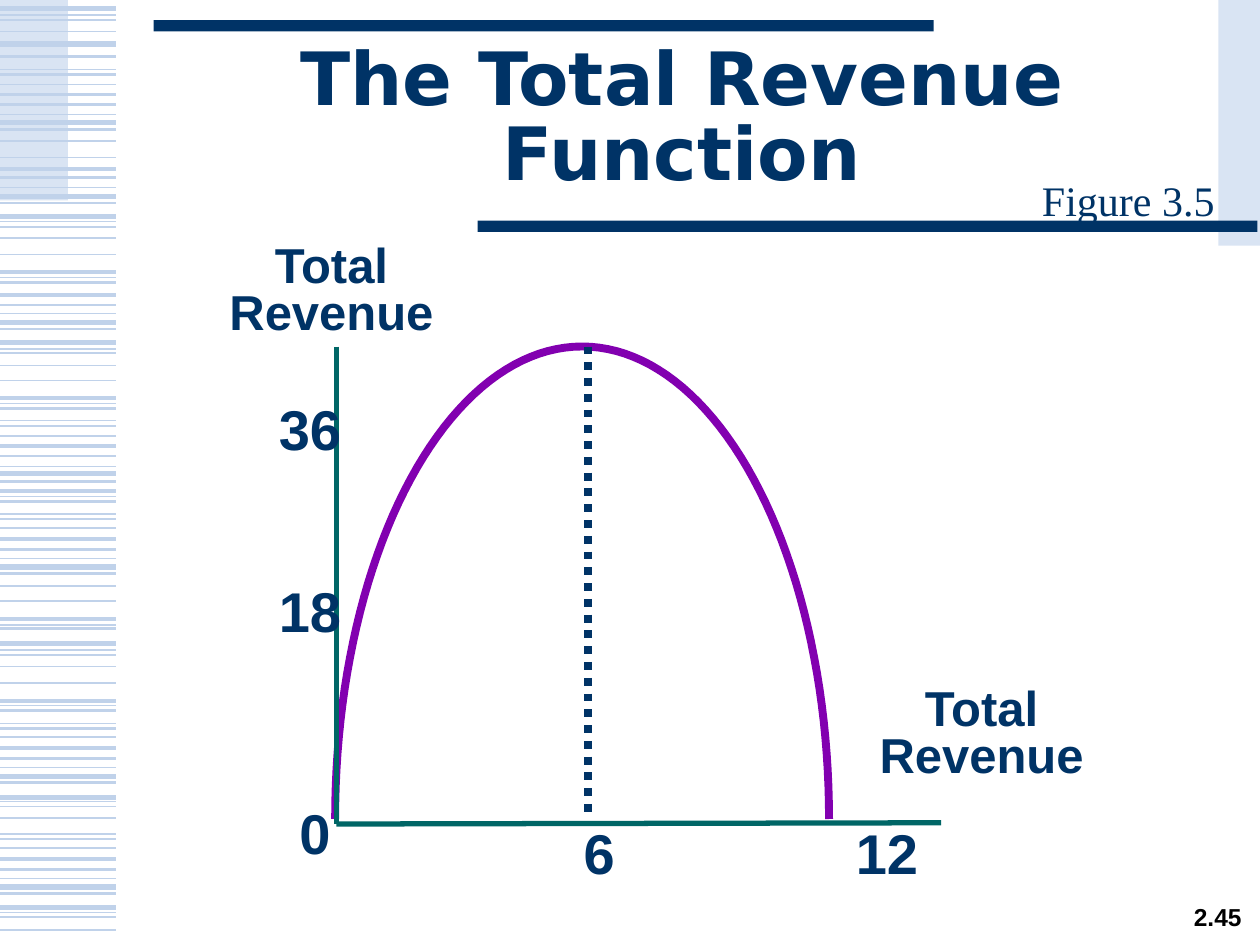
import math

import pptx
import pptx.dml.color
import pptx.enum.dml
import pptx.enum.shapes
import pptx.enum.text
import pptx.oxml
import pptx.util

COLORS = {"navy": "003366", "pale": "D9E4F3", "stripe": "C0D2EA",
          "curve": "8200B0", "axis": "006666", "black": "000000"}

# Coordinates are in inches; length() turns them into Cm.
BARS = [
    (0, 0, 0.54, 1.59, "pale"),
    (1.22, 0.16, 6.19, 0.09, "navy"),
    (9.67, 0, 0.33, 1.95, "pale"),
    (3.79, 1.75, 6.19, 0.09, "navy"),
]
STRIPE_LENGTH = 0.92
STRIPES = {
    0.75: [0.12, 0.55, 0.91, 1.49, 1.76, 2.2, 2.49, 2.77, 3.2, 3.34, 3.7,
           3.94, 4.08, 4.43, 4.96, 5.16, 5.6, 5.74, 6.09, 6.36, 6.97, 7.24],
    1: [0.16, 0.25, 0.67, 1.12, 1.25, 1.8, 1.89, 2.02, 2.8, 2.9, 3.02, 3.46,
        4.19, 4.65, 4.77, 5.2, 5.29, 5.42, 5.85, 6.4, 6.49, 6.62, 6.73,
        7.28, 7.38],
    1.5: [0.45, 0.59, 0.83, 1.03, 1.41, 1.61, 2.24, 2.42, 2.61, 3.24, 3.38,
          3.62, 3.82, 3.98, 4.12, 4.36, 4.55, 4.99, 5.64, 5.78, 6.02, 6.21,
          6.66, 6.9, 7.09],
    2.25: [0.75, 1.34, 2.16, 2.34, 3.16, 3.54, 3.9, 4.28, 4.91, 5.56, 5.94,
           6.82],
    3: [0.07, 0.35, 0.97, 1.56, 1.72, 2.56, 2.72, 3.76, 4.5, 5.11, 6.16,
        6.33, 7.04, 7.2],
}
CURVE = {"cx": 4.62, "base": 6.5, "rx": 1.96, "ry": 3.75, "steps": 90}
GRAPH_LINES = [
    (4.67, 2.75, 4.67, 6.5, "navy", 4.5, "sysDot"),
    (2.67, 2.75, 2.67, 6.54, "axis", 3, None),
    (2.67, 6.54, 7.47, 6.53, "axis", 3, None),
]
STYLES = {
    "title": dict(font="DejaVu Sans", size=42, spacing=0.85, middle=True),
    "number": dict(font="Arial", size=32),
    "label": dict(font="Arial", size=28, spacing=0.8),
    "figure": dict(font="Times New Roman", size=24, bold=False, middle=True,
                   wrap=False),
    "page": dict(font="Arial", size=14, spacing=0.7, color="black",
                 middle=True, wrap=False),
}
TEXTS = [
    ("2.45", 9.33, 7.17, 0.67, 0.27, "page"),
    ("The Total Revenue Function", 1.25, 0.33, 8.32, 1.25, "title"),
    ("0", 2.25, 6.29, 0.5, 0.63, "number"),
    ("18", 2, 4.53, 0.92, 0.63, "number"),
    ("36", 2, 3.08, 0.92, 0.63, "number"),
    ("12", 6.58, 6.45, 0.92, 0.63, "number"),
    ("6", 4.42, 6.45, 0.67, 0.63, "number"),
    ("Total Revenue", 6.83, 5.42, 1.92, 0.85, "label"),
    ("Total Revenue", 1.67, 1.9, 1.92, 0.85, "label"),
    ("Figure 3.5", 8.08, 1.42, 1.75, 0.33, "figure"),
]


def length(inches):
    return pptx.util.Cm(inches * 2.54)


def rgb(name):
    return pptx.dml.color.RGBColor.from_string(COLORS[name])


def add_bar(s, x, y, w, h, color):
    sp = s.shapes.add_shape(pptx.enum.shapes.MSO_SHAPE.RECTANGLE,
                            *map(length, (x, y, w, h)))
    sp.shadow.inherit = False
    sp.fill.solid()
    sp.fill.fore_color.rgb = rgb(color)
    sp.line.fill.background()


def add_line(s, x1, y1, x2, y2, color, width, dash=None):
    sp = s.shapes.add_connector(pptx.enum.shapes.MSO_CONNECTOR.STRAIGHT,
                                *map(length, (x1, y1, x2, y2)))
    sp.line.color.rgb = rgb(color)
    sp.line.width = pptx.util.Pt(width)
    if dash:
        sp.line.dash_style = pptx.enum.dml.MSO_LINE.from_xml(dash)
    pr = sp.element.spPr
    pr.append(pr.makeelement(pptx.oxml.ns.qn("a:effectLst"), {}))


def add_curve(s, cx, base, rx, ry, steps):
    angles = [math.pi * (1 - i / steps) for i in range(steps + 1)]
    points = [(length(cx + rx * math.cos(a)), length(base - ry * math.sin(a)))
              for a in angles]
    builder = s.shapes.build_freeform(*points[0])
    builder.add_line_segments(points[1:], close=False)
    sp = builder.convert_to_shape()
    sp.shadow.inherit = False
    sp.fill.background()
    sp.line.color.rgb = rgb("curve")
    sp.line.width = pptx.util.Pt(4.5)


def add_text(s, text, x, y, w, h, font, size, spacing=1.0, color="navy",
             bold=True, middle=False, wrap=True):
    anchor = pptx.enum.text.MSO_ANCHOR
    tf = s.shapes.add_textbox(*map(length, (x, y, w, h))).text_frame
    tf.word_wrap = wrap
    tf.vertical_anchor = anchor.MIDDLE if middle else anchor.TOP
    tf.text = text
    p = tf.paragraphs[0]
    p.alignment = pptx.enum.text.PP_ALIGN.CENTER
    p.line_spacing = spacing
    r = p.runs[0]
    r.font.name = font
    r.font.size = pptx.util.Pt(size)
    r.font.bold = bold
    r.font.color.rgb = rgb(color)


def main():
    prs = pptx.Presentation()
    prs.slide_width = pptx.util.Cm(25.4)
    prs.slide_height = pptx.util.Cm(19.05)
    s = prs.slides.add_slide(prs.slide_layouts[6])
    for bar in BARS:
        add_bar(s, *bar)
    for width, rows in STRIPES.items():
        for y in rows:
            add_line(s, 0, y, STRIPE_LENGTH, y, "stripe", width)
    add_curve(s, **CURVE)
    for line in GRAPH_LINES:
        add_line(s, *line)
    for text, x, y, w, h, style in TEXTS:
        add_text(s, text, x, y, w, h, **STYLES[style])
    prs.save("out.pptx")


if __name__ == "__main__":
    main()
